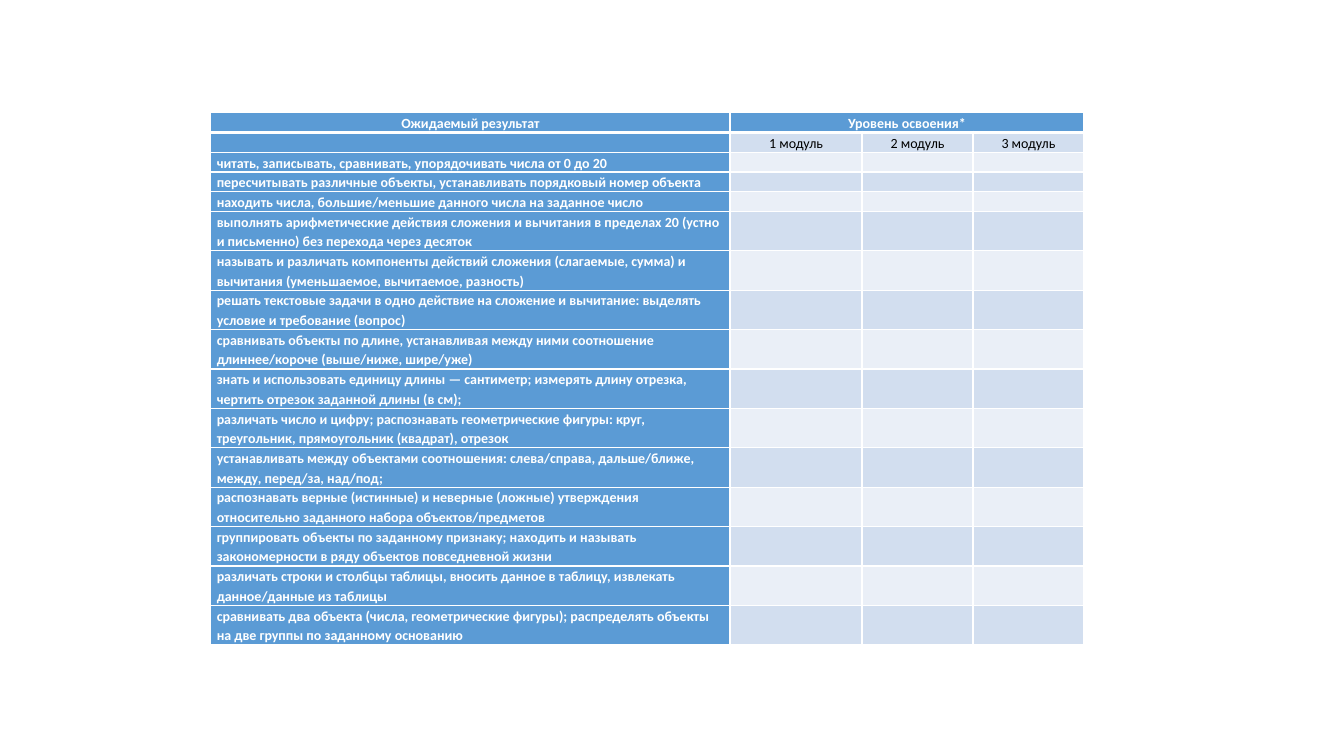
from lxml import etree
from pptx import Presentation
from pptx import util as u
from pptx.dml.color import RGBColor
from pptx.enum import text
from pptx.oxml.ns import qn

HEADINGS = ["Ожидаемый результат", "Уровень освоения*"]
MODULES = ["1 модуль", "2 модуль", "3 модуль"]
RESULTS = [
    ("читать, записывать, сравнивать, упорядочивать числа от 0 до 20", 1),
    ("пересчитывать различные объекты, устанавливать порядковый номер объекта", 1),
    ("находить числа, большие/меньшие данного числа на заданное число", 1),
    ("выполнять арифметические действия сложения и вычитания в пределах 20 (устно и письменно) без перехода через десяток", 2),
    ("называть и различать компоненты действий сложения (слагаемые, сумма) и вычитания (уменьшаемое, вычитаемое, разность)", 2),
    ("решать текстовые задачи в одно действие на сложение и вычитание: выделять условие и требование (вопрос)", 2),
    ("сравнивать объекты по длине, устанавливая между ними соотношение длиннее/короче (выше/ниже, шире/уже)", 2),
    ("знать и использовать единицу длины — сантиметр; измерять длину отрезка, чертить отрезок заданной длины (в см);", 2),
    ("различать число и цифру; распознавать геометрические фигуры: круг, треугольник, прямоугольник (квадрат), отрезок", 2),
    ("устанавливать между объектами соотношения: слева/справа, дальше/ближе, между, перед/за, над/под;", 2),
    ("распознавать верные (истинные) и неверные (ложные) утверждения относительно заданного набора объектов/предметов", 2),
    ("группировать объекты по заданному признаку; находить и называть закономерности в ряду объектов повседневной жизни", 2),
    ("различать строки и столбцы таблицы, вносить данное в таблицу, извлекать данное/данные из таблицы", 2),
    ("сравнивать два объекта (числа, геометрические фигуры); распределять объекты на две группы по заданному основанию", 2),
]
ROWS = [(HEADINGS + ["", ""], 1), ([""] + MODULES, 1)]
ROWS += [([result, "", "", ""], lines) for result, lines in RESULTS]
COLUMN_WIDTHS = [5.15, 1.31, 1.1, 1.1]
LEFT, TOP, HEIGHT = 2.09, 1.12, 5.28
BLUE, BANDS = "5B9BD5", ["EAEFF7", "D2DEEF"]
WHITE, BLACK = "FFFFFF", "000000"


def paint(fill, colour):
    fill.solid()
    fill.fore_color.rgb = RGBColor.from_string(colour)


def add_borders(cell, top, bottom):
    properties = cell._tc.get_or_add_tcPr()
    for side, points in [("L", 1), ("R", 1), ("T", top), ("B", bottom)]:
        line = etree.SubElement(properties, qn(f"a:ln{side}"), w=str(u.Pt(points)))
        solid = etree.SubElement(line, qn("a:solidFill"))
        etree.SubElement(solid, qn("a:srgbClr"), val=WHITE)


def write(cell, words, centred, emphasised):
    cell.margin_left = cell.margin_right = u.Inches(0.06)
    cell.margin_top = cell.margin_bottom = 0
    cell.text_frame.text = words
    paragraph = cell.text_frame.paragraphs[0]
    paragraph.alignment = text.PP_ALIGN.CENTER if centred else text.PP_ALIGN.LEFT
    paragraph.line_spacing = 1.15
    for run in paragraph.runs:
        run.font.name = "Calibri"
        run.font.size = u.Pt(10)
        run.font.bold = emphasised
        paint(run.font.fill, WHITE if emphasised else BLACK)
    if not words:
        etree.SubElement(paragraph._p, qn("a:endParaRPr"), sz="1000")


def main():
    deck = Presentation()
    deck.slide_width, deck.slide_height = u.Inches(13.33), u.Inches(7.5)
    slide = deck.slides.add_slide(deck.slide_layouts[6])
    checklist = slide.shapes.add_table(
        len(ROWS), len(COLUMN_WIDTHS), u.Inches(LEFT), u.Inches(TOP),
        u.Inches(sum(COLUMN_WIDTHS)), u.Inches(HEIGHT)).table
    checklist.first_row = checklist.horz_banding = False
    for column, width in zip(checklist.columns, COLUMN_WIDTHS):
        column.width = u.Inches(width)
    line_height = HEIGHT / sum(lines for _, lines in ROWS)
    for r, (entries, lines) in enumerate(ROWS):
        checklist.rows[r].height = u.Inches(lines * line_height)
        for c, words in enumerate(entries):
            cell = checklist.cell(r, c)
            emphasised = r == 0 or c == 0
            add_borders(cell, 3 if r == 1 else 1, 3 if r == 0 else 1)
            paint(cell.fill, BLUE if emphasised else BANDS[r % 2])
            write(cell, words, r < 2, emphasised)
    checklist.cell(0, 1).merge(checklist.cell(0, 3))
    deck.save("out.pptx")


if __name__ == "__main__":
    main()
